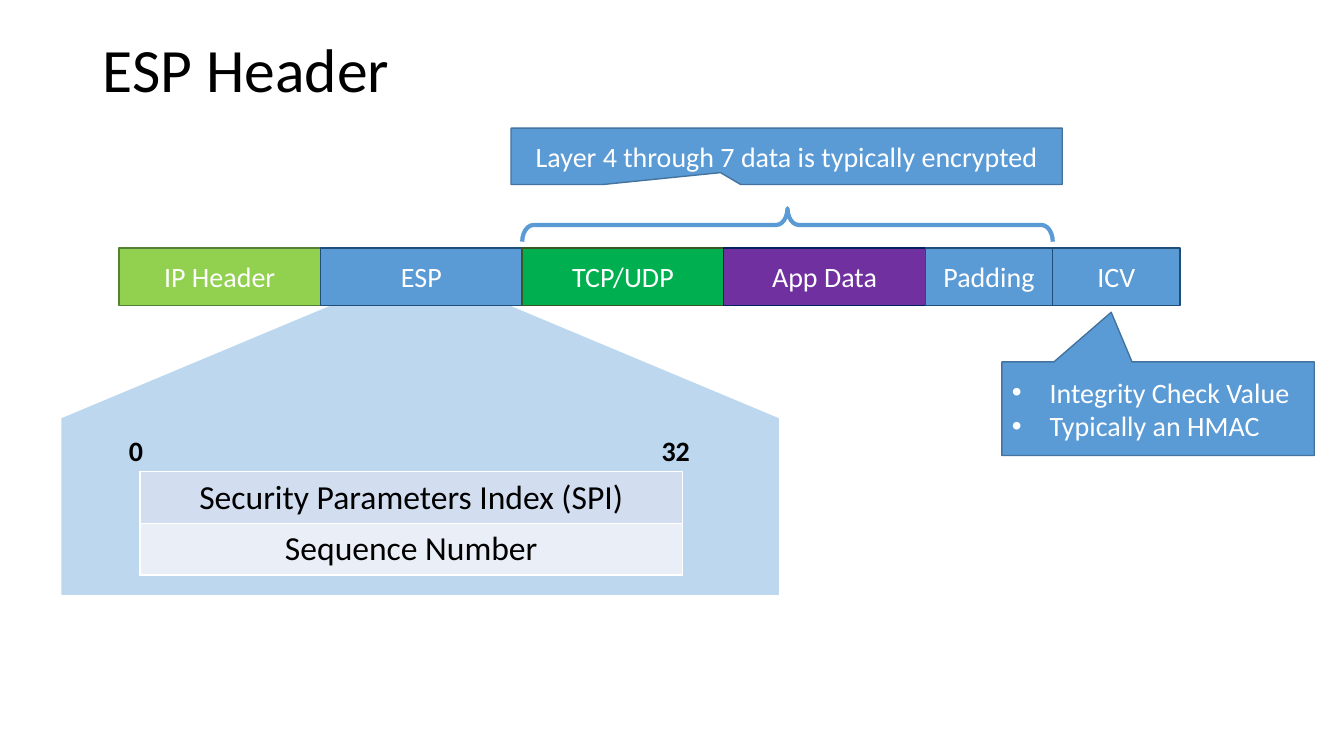
import pptx
import pptx.dml.color
import pptx.enum.shapes
import pptx.enum.text
import pptx.oxml
import pptx.oxml.ns
import pptx.util

Cm = pptx.util.Cm
Pt = pptx.util.Pt
Shape = pptx.enum.shapes.MSO_SHAPE
Align = pptx.enum.text.PP_ALIGN
Anchor = pptx.enum.text.MSO_ANCHOR
BLUE = "5B9BD5"


def colour(value):
    return pptx.dml.color.RGBColor.from_string(value)


def assign(target, values):
    for name, value in values.items():
        setattr(target, name, value)


def element(tag, content="", attributes=""):
    namespace = pptx.oxml.ns.nsdecls("a")
    return pptx.oxml.parse_xml(f"<a:{tag} {namespace} {attributes}>{content}</a:{tag}>")


class Slide:
    font = "Calibri"

    def __init__(self, deck):
        self.page = deck.slides.add_slide(deck.slide_layouts[5])
        self.shapes = self.page.shapes

    def place(self, box, left, top, width, height):
        assign(box, {"left": Cm(left), "top": Cm(top), "width": Cm(width), "height": Cm(height)})

    def set_text(self, frame, lines, size=20, ink="FFFFFF", bold=False, align=Align.CENTER):
        frame.text = "\n".join(lines)
        for para in frame.paragraphs:
            para.alignment = align
            for span in para.runs:
                assign(span.font, {"name": self.font, "size": Pt(size), "bold": bold})
                span.font.color.rgb = colour(ink)

    def title(self, text, area):
        box = self.page.shapes.title
        self.place(box, *area)
        self.set_text(box.text_frame, [text], 44, "000000", align=Align.LEFT)
        assign(box.text_frame, {"vertical_anchor": Anchor.MIDDLE, "word_wrap": True})
        box.text_frame.paragraphs[0].line_spacing = 0.9

    def shape(self, kind, area, fill=None, line=None, weight=1, lines=(), adjustments=()):
        box = self.shapes.add_shape(kind, *(Cm(length) for length in area))
        box.shadow.inherit = False
        if fill:
            box.fill.solid()
            box.fill.fore_color.rgb = colour(fill)
        else:
            box.fill.background()
        if line:
            box.line.color.rgb = colour(line)
            box.line.width = Pt(weight)
        else:
            box.line.fill.background()
        for index, value in enumerate(adjustments):
            box.adjustments[index] = value
        if lines:
            self.set_text(box.text_frame, lines)
            assign(box.text_frame, {"vertical_anchor": Anchor.MIDDLE, "word_wrap": True})
        return box

    def label(self, text, area, align):
        box = self.shapes.add_textbox(*(Cm(length) for length in area))
        self.set_text(box.text_frame, [text], ink="000000", bold=True, align=align)
        assign(box.text_frame, {
            "word_wrap": False,
            "auto_size": pptx.enum.text.MSO_AUTO_SIZE.SHAPE_TO_FIT_TEXT,
        })

    def bullets(self, box):
        indent = Cm(0.95)
        for para in box.text_frame.paragraphs:
            para.alignment = Align.LEFT
            properties = para._p.get_or_add_pPr()
            properties.set("marL", str(indent))
            properties.set("indent", str(-indent))
            properties.append(element("buFont", attributes='typeface="Arial"'))
            properties.append(element("buChar", attributes='char="•"'))

    def table(self, rows, area):
        lengths = (Cm(length) for length in area)
        table = self.page.shapes.add_table(len(rows), 1, *lengths).table
        assign(table, {"first_row": False, "horz_banding": False})
        line = '<a:solidFill><a:srgbClr val="FFFFFF"/></a:solidFill>'
        for index, (text, fill) in enumerate(rows):
            cell = table.cell(index, 0)
            cell.fill.solid()
            cell.fill.fore_color.rgb = colour(fill)
            cell.vertical_anchor = Anchor.MIDDLE
            self.set_text(cell.text_frame, [text], 24, "000000")
            properties = cell._tc.get_or_add_tcPr()
            for position, side in enumerate("LRTB"):
                border = element(f"ln{side}", line, f'w="{Pt(1)}"')
                properties.insert(position, border)


def main():
    deck = pptx.Presentation()
    assign(deck, {"slide_width": Cm(33.87), "slide_height": Cm(19.05)})
    slide = Slide(deck)
    slide.title("ESP Header", (2.34, 0, 29.21, 3.68))

    slide.shapes = slide.page.shapes.add_group_shape().shapes
    slide.shape(Shape.TRAPEZOID, (1.55, 7.7, 18.08, 2.84), "BDD7EE", adjustments=[2.39])
    slide.shape(Shape.RECTANGLE, (1.55, 10.54, 18.08, 4.45), "BDD7EE")
    slide.label("0", (3, 10.8, 0.86, 1.12), Align.LEFT)
    slide.label("32", (16.41, 10.8, 1.24, 1.12), Align.CENTER)
    slide.shapes = slide.page.shapes

    slide.table([
        ("Security Parameters Index (SPI)", "D2DEEF"),
        ("Sequence Number", "EAEFF7"),
    ], (3.53, 11.89, 13.67, 2.6))

    fields = [
        ("IP Header", 5.08, "92D050", "548235"),
        ("ESP", 5.08, BLUE, "1F4E79"),
        ("TCP/UDP", 5.08, "00B050", "385723"),
        ("App Data", 5.08, "7030A0", "002060"),
        ("Padding", 3.21, BLUE, "1F4E79"),
        ("ICV", 3.21, BLUE, "1F4E79"),
    ]
    left = 3
    edges = {}
    for name, width, fill, line in fields:
        edges[name] = left
        slide.shape(Shape.RECTANGLE, (left, 6.25, width, 1.45), fill, line, lines=[name])
        left += width

    start, end = edges["TCP/UDP"], edges["ICV"]
    depth, span, middle = 0.84, end - start, 5.67
    area = ((start + end - depth) / 2, middle - span / 2, depth, span)
    brace = slide.shape(Shape.LEFT_BRACE, area, line=BLUE, weight=3, adjustments=[0.34, 0.5])
    brace.rotation = 90

    slide.shape(Shape.RECTANGULAR_CALLOUT, (12.88, 3.23, 13.89, 1.42), BLUE, "43739E",
                lines=["Layer 4 through 7 data is typically encrypted"],
                adjustments=[-0.12, 0.29])
    check = slide.shape(Shape.RECTANGULAR_CALLOUT, (25.25, 9.12, 7.87, 2.36), BLUE, "43739E",
                        lines=["Integrity Check Value", "Typically an HMAC"],
                        adjustments=[-0.15, -1.03])
    slide.bullets(check)
    deck.save("out.pptx")


if __name__ == "__main__":
    main()
